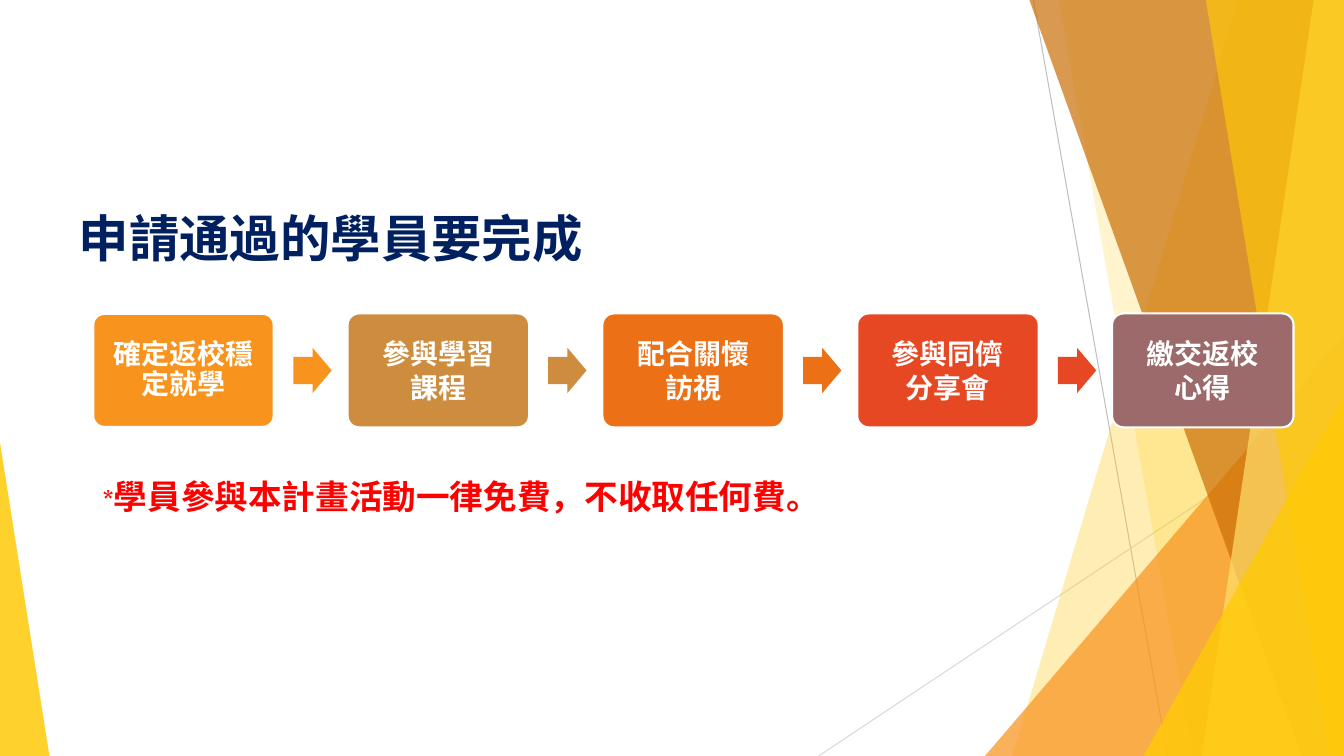
from lxml import etree
from pptx import Presentation
from pptx.dml.color import RGBColor
from pptx.enum.shapes import MSO_CONNECTOR, MSO_SHAPE
from pptx.enum.text import MSO_ANCHOR, PP_ALIGN
from pptx.oxml.ns import qn
from pptx.util import Inches, Pt

SLIDE_W, SLIDE_H = 13.33, 7.5
CJK_FONT, LATIN_FONT = "Noto Sans CJK SC", "Cabin"
COLORS = {
    "white": "FFFFFF", "navy": "002060", "red": "FF0000",
    "gold": "FFCA08", "pale_gold": "FFDF6B", "orange": "F8931D",
    "brown": "CA6F06", "tan": "CE8D3E", "pumpkin": "EC7016",
    "vermilion": "E64823", "mauve": "9C6A6A",
    "gray": "BFBFBF", "light_gray": "D9D9D9",
}
STEPS = [
    (["確定返校穩定就學"], "orange"),
    (["參與學習", "課程"], "tan"),
    (["配合關懷", "訪視"], "pumpkin"),
    (["參與同儕", "分享會"], "vermilion"),
    (["繳交返校", "心得"], "mauve"),
]


def rgb(color):
    return RGBColor.from_string(COLORS[color])


def paint(shape, color, opacity=100):
    """Give a shape a plain fill with no outline or shadow."""
    shape.shadow.inherit = False
    shape.line.fill.background()
    shape.fill.solid()
    shape.fill.fore_color.rgb = rgb(color)
    if opacity < 100:
        tint = shape.fill._xPr.find(qn("a:solidFill"))[0]
        etree.SubElement(tint, qn("a:alpha")).set("val", str(opacity * 1000))


def add_run(paragraph, text, size, color, font=CJK_FONT):
    run = paragraph.add_run()
    run.text = text
    run.font.size = Pt(size)
    run.font.bold = True
    run.font.color.rgb = rgb(color)
    run.font.name = font
    etree.SubElement(run.font._element, qn("a:ea")).set("typeface", CJK_FONT)


def add_hairline(slide, start, end, color):
    hairline = slide.shapes.add_connector(
        MSO_CONNECTOR.STRAIGHT, *(Inches(v) for v in (*start, *end)))
    hairline.line.color.rgb = rgb(color)
    hairline.line.width = Pt(0.75)
    etree.SubElement(hairline._element.spPr, qn("a:effectLst"))


def add_band(slide, top_x, bottom_x, color, opacity):
    """Fill from a slanted edge to the right side of the slide."""
    corners = [(top_x, 0), (SLIDE_W, 0), (SLIDE_W, SLIDE_H), (bottom_x, SLIDE_H)]
    points = [(Inches(x), Inches(y)) for x, y in corners]
    outline = slide.shapes.build_freeform(*points[0])
    outline.add_line_segments(points[1:], close=True)
    paint(outline.convert_to_shape(), color, opacity)


def add_corner(slide, left, top, width, apex, color, opacity):
    """Place a right triangle standing on the bottom edge of the slide."""
    corner = slide.shapes.add_shape(
        MSO_SHAPE.ISOSCELES_TRIANGLE, Inches(left), Inches(top),
        Inches(width), Inches(SLIDE_H - top))
    corner.adjustments[0] = apex
    paint(corner, color, opacity)


def add_backdrop(slide):
    add_hairline(slide, (10.25, 0), (11.58, SLIDE_H), "gray")
    add_hairline(slide, (SLIDE_W, 4.03), (8.12, SLIDE_H), "light_gray")
    add_band(slide, 12.28, 10.04, "gold", 30)
    add_band(slide, 10.5, 11.83, "gold", 20)
    add_corner(slide, 9.77, 3.33, 3.56, 1, "orange", 72)
    add_band(slide, 10.21, 12.91, "brown", 70)
    add_band(slide, 13.03, 11.92, "pale_gold", 70)
    add_band(slide, 11.96, 13.18, "gold", 65)
    add_corner(slide, 11.34, 3.93, 1.99, 1, "gold", 80)
    add_corner(slide, 0, 4.39, 0.49, 0, "gold", 85)


def add_title(slide, left, top, width, height):
    title = slide.shapes.title
    title.left, title.top = Inches(left), Inches(top)
    title.width, title.height = Inches(width), Inches(height)
    frame = title.text_frame
    frame.vertical_anchor = MSO_ANCHOR.TOP
    frame.paragraphs[0].alignment = PP_ALIGN.LEFT
    add_run(frame.paragraphs[0], "申請通過的學員要完成", 36, "navy")


def add_step(slide, left, top, width, height, lines, color, border):
    card = slide.shapes.add_shape(
        MSO_SHAPE.ROUNDED_RECTANGLE, Inches(left), Inches(top),
        Inches(width), Inches(height))
    card.adjustments[0] = 0.1
    paint(card, color)
    card.line.color.rgb = rgb("white")
    card.line.width = Pt(border)
    frame = card.text_frame
    frame.word_wrap = True
    frame.vertical_anchor = MSO_ANCHOR.MIDDLE
    frame.margin_left = frame.margin_right = Inches(0.08)
    frame.margin_top = frame.margin_bottom = Inches(0.08)
    for i, line in enumerate(lines):
        paragraph = frame.add_paragraph() if i else frame.paragraphs[0]
        paragraph.alignment = PP_ALIGN.CENTER
        paragraph.line_spacing = Pt(24) if len(lines) > 1 else 0.9
        add_run(paragraph, line, 20, "white")


def add_process(slide, left, top, width, height):
    card_w, arrow_w, arrow_h, arrow_gap = 1.8, 0.38, 0.45, 0.19
    pitch = (width - card_w) / (len(STEPS) - 1)
    for i, (lines, color) in enumerate(STEPS):
        x = left + i * pitch
        add_step(slide, x, top, card_w, height, lines, color, 1.5 if i else 2.25)
        if i < len(STEPS) - 1:
            arrow = slide.shapes.add_shape(
                MSO_SHAPE.RIGHT_ARROW, Inches(x + card_w + arrow_gap),
                Inches(top + (height - arrow_h) / 2),
                Inches(arrow_w), Inches(arrow_h))
            arrow.adjustments[0] = 0.6
            arrow.adjustments[1] = 0.5
            paint(arrow, color)


def add_fee_note(slide, left, top, width, height):
    note = slide.shapes.add_textbox(
        Inches(left), Inches(top), Inches(width), Inches(height))
    note.text_frame.word_wrap = True
    paragraph = note.text_frame.paragraphs[0]
    add_run(paragraph, "*", 18, "red", LATIN_FONT)
    add_run(paragraph, "學員參與本計畫活動一律免費，不收取任何費。", 24, "red")


def main():
    deck = Presentation()
    deck.slide_width, deck.slide_height = Inches(SLIDE_W), Inches(SLIDE_H)
    slide = deck.slides.add_slide(deck.slide_layouts[5])
    add_backdrop(slide)
    add_title(slide, 0.68, 2, 7.32, 1.45)
    add_process(slide, 0.92, 3.11, 11.91, 1.13)
    add_fee_note(slide, 0.92, 4.67, 7.46, 0.5)
    deck.save("out.pptx")


if __name__ == "__main__":
    main()
